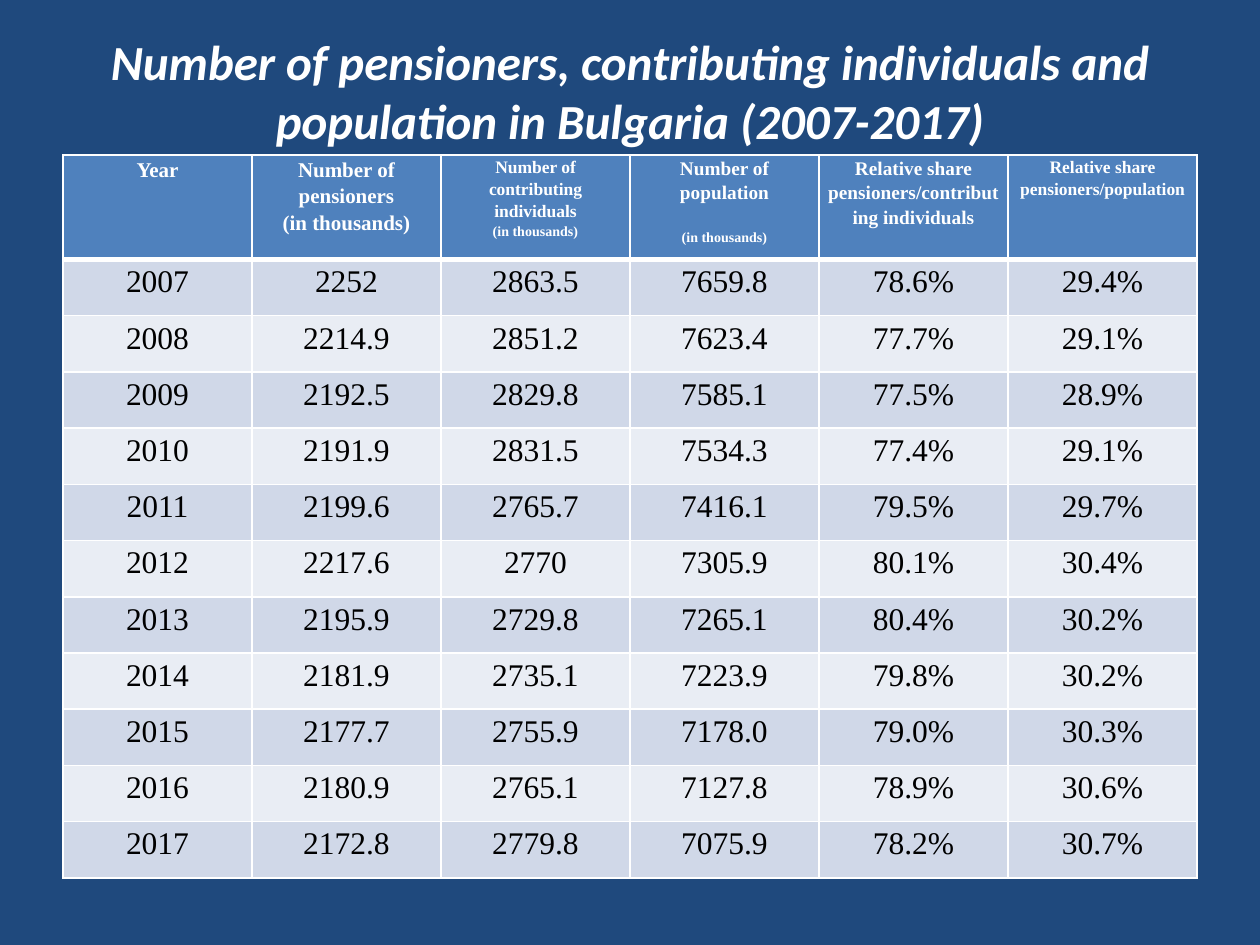
from dataclasses import dataclass

from lxml import etree
from pptx import Presentation
from pptx.dml.color import RGBColor
from pptx.enum.text import MSO_ANCHOR, MSO_AUTO_SIZE, PP_ALIGN
from pptx.oxml.ns import qn
from pptx.table import _Cell
from pptx.util import Inches, Pt

CENTER = PP_ALIGN.CENTER
TOP, MIDDLE = MSO_ANCHOR.TOP, MSO_ANCHOR.MIDDLE
NO_AUTOFIT = MSO_AUTO_SIZE.NONE

COLORS = {
    "background": "1F497D",
    "white": "FFFFFF",
    "black": "000000",
    "header": "4F81BD",
    "odd_year": "D0D8E8",
    "even_year": "E9EDF4",
}
TITLE_FONT, TABLE_FONT = "Calibri", "Times New Roman"
TITLE = "Number of pensioners, contributing individuals and population in Bulgaria (2007-2017)"
TABLE_WIDTH, TABLE_HEIGHT, HEADER_HEIGHT = 9, 5.74, 0.83
GRID_WIDTH, HEADER_RULE_WIDTH = 1, 3


@dataclass(frozen=True)
class Line:
    text: str
    size: float
    bold: bool = False
    color: str = "black"
    space_before: float = 0


def heading(text: str, size: float, space_before: float = 0) -> Line:
    return Line(text, size, True, "white", space_before)


HEADINGS = [
    [heading("Year", 12)],
    [heading("Number of pensioners", 12), heading("(in thousands)", 12)],
    [heading("Number of contributing individuals", 10), heading("(in thousands)", 8)],
    [heading("Number of population", 11), heading("(in thousands)", 8, 13.2)],
    [heading("Relative share pensioners/contributing individuals", 11)],
    [heading("Relative share pensioners/population", 10)],
]
YEARLY_FIGURES = [
    ("2007", "2252", "2863.5", "7659.8", "78.6%", "29.4%"),
    ("2008", "2214.9", "2851.2", "7623.4", "77.7%", "29.1%"),
    ("2009", "2192.5", "2829.8", "7585.1", "77.5%", "28.9%"),
    ("2010", "2191.9", "2831.5", "7534.3", "77.4%", "29.1%"),
    ("2011", "2199.6", "2765.7", "7416.1", "79.5%", "29.7%"),
    ("2012", "2217.6", "2770", "7305.9", "80.1%", "30.4%"),
    ("2013", "2195.9", "2729.8", "7265.1", "80.4%", "30.2%"),
    ("2014", "2181.9", "2735.1", "7223.9", "79.8%", "30.2%"),
    ("2015", "2177.7", "2755.9", "7178.0", "79.0%", "30.3%"),
    ("2016", "2180.9", "2765.1", "7127.8", "78.9%", "30.6%"),
    ("2017", "2172.8", "2779.8", "7075.9", "78.2%", "30.7%"),
]


def rgb(name: str) -> RGBColor:
    return RGBColor.from_string(COLORS[name])


def add_borders(cell: _Cell, top: float, bottom: float) -> None:
    """Draw white cell borders; must run before the fill is set."""
    properties = cell._tc.get_or_add_tcPr()
    widths = {"a:lnL": GRID_WIDTH, "a:lnR": GRID_WIDTH, "a:lnT": top, "a:lnB": bottom}
    for tag, width in widths.items():
        border = etree.SubElement(properties, qn(tag), w=str(Pt(width)))
        fill = etree.SubElement(border, qn("a:solidFill"))
        etree.SubElement(fill, qn("a:srgbClr"), val=COLORS["white"])


def fill_cell(cell: _Cell, lines: list[Line], fill: str, top: float, bottom: float) -> None:
    add_borders(cell, top, bottom)
    cell.fill.solid()
    cell.fill.fore_color.rgb = rgb(fill)
    cell.margin_left = cell.margin_right = Inches(0.07)
    cell.margin_top = cell.margin_bottom = 0
    cell.vertical_anchor = TOP
    cell.text = "\n".join(line.text for line in lines)
    for paragraph, line in zip(cell.text_frame.paragraphs, lines):
        paragraph.alignment = CENTER
        paragraph.line_spacing = 1.15
        paragraph.space_before = Pt(line.space_before)
        paragraph.font.name = TABLE_FONT
        paragraph.font.size = Pt(line.size)
        paragraph.font.bold = line.bold
        paragraph.font.color.rgb = rgb(line.color)


def add_title(slide) -> None:
    title = slide.shapes.title
    title.left, title.top = Inches(0.5), Inches(0.3)
    title.width, title.height = Inches(9), Inches(1.25)
    frame = title.text_frame
    frame.text = TITLE
    frame.word_wrap = True
    frame.auto_size = NO_AUTOFIT
    frame.vertical_anchor = MIDDLE
    # The bottom inset keeps the text clear of the table.
    frame.margin_top, frame.margin_bottom = 0, Inches(0.42)
    paragraph = frame.paragraphs[0]
    paragraph.alignment = CENTER
    paragraph.font.name = TITLE_FONT
    paragraph.font.size = Pt(28)
    paragraph.font.bold = paragraph.font.italic = True
    paragraph.font.color.rgb = rgb("white")


def add_pension_table(slide) -> None:
    table = slide.shapes.add_table(
        len(YEARLY_FIGURES) + 1, len(HEADINGS),
        Inches(0.5), Inches(1.23), Inches(TABLE_WIDTH), Inches(TABLE_HEIGHT),
    ).table
    for column in table.columns:
        column.width = Inches(TABLE_WIDTH / len(HEADINGS))
    for row in table.rows:
        row.height = Inches((TABLE_HEIGHT - HEADER_HEIGHT) / len(YEARLY_FIGURES))
    table.rows[0].height = Inches(HEADER_HEIGHT)

    for column, lines in enumerate(HEADINGS):
        fill_cell(table.cell(0, column), lines, "header", GRID_WIDTH, HEADER_RULE_WIDTH)
    for row, figures in enumerate(YEARLY_FIGURES, start=1):
        band = "odd_year" if row % 2 else "even_year"
        top = HEADER_RULE_WIDTH if row == 1 else GRID_WIDTH
        for column, figure in enumerate(figures):
            fill_cell(table.cell(row, column), [Line(figure, 18)], band, top, GRID_WIDTH)


def main() -> None:
    presentation = Presentation()
    presentation.slide_width, presentation.slide_height = Inches(10), Inches(7.5)
    slide = presentation.slides.add_slide(presentation.slide_layouts[5])
    slide.background.fill.solid()
    slide.background.fill.fore_color.rgb = rgb("background")
    add_title(slide)
    add_pension_table(slide)
    presentation.save("out.pptx")


if __name__ == "__main__":
    main()
